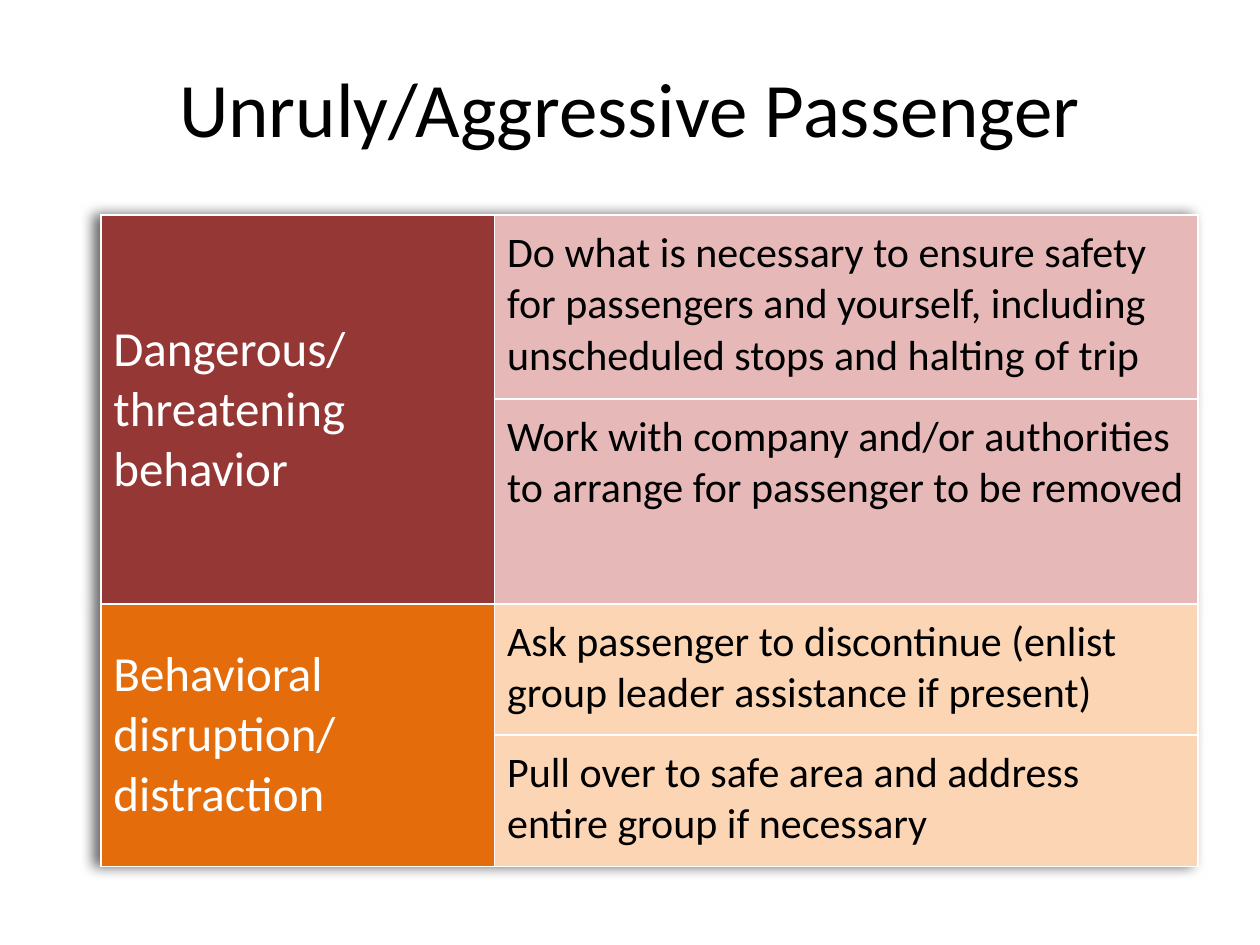
from dataclasses import dataclass

from lxml.etree import SubElement
from pptx import Presentation
from pptx.dml.color import RGBColor
from pptx.enum.text import MSO_ANCHOR, PP_ALIGN
from pptx.oxml.ns import qn
from pptx.table import Table, _Cell
from pptx.util import Pt

FONT = "Calibri"
COLUMNS = (225, 402)
ROWS = (105, 117, 75, 75)
MARGIN = Pt(7.2)


@dataclass
class Group:
    """A behavior with its responses and colours."""
    behavior: list[str]
    responses: list[str]
    dark: str
    light: str


GROUPS = [
    Group(["Dangerous/", "threatening behavior"],
          ["Do what is necessary to ensure safety for passengers and yourself, "
           "including unscheduled stops and halting of trip",
           "Work with company and/or authorities to arrange for passenger to be removed"],
          "953735", "E6B9B8"),
    Group(["Behavioral disruption/", "distraction"],
          ["Ask passenger to discontinue (enlist group leader assistance if present)",
           "Pull over to safe area and address entire group if necessary"],
          "E46C0A", "FCD5B5"),
]


def rgb(value: str) -> RGBColor:
    """Turn a hex string into a colour."""
    return RGBColor.from_string(value)


def set_format(target: object, values: dict) -> None:
    """Set attributes from a dict of format values."""
    for name, value in values.items():
        setattr(target, name, value)


def write(tf: object, lines: list[str], size: float, color: str, align: PP_ALIGN) -> None:
    """Write one paragraph per line."""
    tf.text = "\n".join(lines)
    for p in tf.paragraphs:
        p.alignment = align
        for r in p.runs:
            set_format(r.font, {"name": FONT, "size": Pt(size), "bold": False})
            r.font.color.rgb = rgb(color)


def add_borders(cell: _Cell) -> None:
    """Give a cell thin white borders."""
    tc_pr = cell._tc.get_or_add_tcPr()
    for i, side in enumerate(("lnL", "lnR", "lnT", "lnB")):
        ln = tc_pr.makeelement(qn(f"a:{side}"), {"w": str(Pt(1))})
        fill = SubElement(ln, qn("a:solidFill"))
        SubElement(fill, qn("a:srgbClr"), val="FFFFFF")
        tc_pr.insert(i, ln)


def fill_cell(cell: _Cell, lines: list[str], size: float, color: str,
              fill: str, anchor: MSO_ANCHOR) -> None:
    """Fill a cell with text and colour."""
    write(cell.text_frame, lines, size, color, PP_ALIGN.LEFT)
    set_format(cell, {"vertical_anchor": anchor, "margin_left": MARGIN, "margin_right": MARGIN,
                      "margin_top": MARGIN, "margin_bottom": MARGIN})
    cell.fill.solid()
    cell.fill.fore_color.rgb = rgb(fill)


def add_shadow(table: Table) -> None:
    """Cast a soft shadow to the left of the table."""
    effects = SubElement(table._tbl.tblPr, qn("a:effectLst"))
    table._tbl.tblPr.insert(0, effects)
    shadow = SubElement(effects, qn("a:outerShdw"), blurRad=str(Pt(8)), dist=str(Pt(4)),
                        dir="10800000", algn="r", rotWithShape="0")
    black = SubElement(shadow, qn("a:srgbClr"), val="000000")
    SubElement(black, qn("a:alpha"), val="60000")


def main() -> None:
    """Build the slide."""
    prs = Presentation()
    set_format(prs, {"slide_width": Pt(720), "slide_height": Pt(540)})
    s = prs.slides.add_slide(prs.slide_layouts[5])

    title = s.shapes.title
    set_format(title, {"left": Pt(36), "top": Pt(16), "width": Pt(648), "height": Pt(90)})
    title.text_frame.vertical_anchor = MSO_ANCHOR.MIDDLE
    write(title.text_frame, ["Unruly/Aggressive Passenger"], 44, "000000", PP_ALIGN.CENTER)

    table = s.shapes.add_table(len(ROWS), len(COLUMNS), Pt(57.6), Pt(123),
                               Pt(sum(COLUMNS)), Pt(sum(ROWS))).table
    set_format(table, {"first_row": False, "horz_banding": False})
    for column, width in zip(table.columns, COLUMNS):
        column.width = Pt(width)
    for row, height in zip(table.rows, ROWS):
        row.height = Pt(height)

    top = 0
    for group in GROUPS:
        bottom = top + len(group.responses) - 1
        table.cell(top, 0).merge(table.cell(bottom, 0))
        fill_cell(table.cell(top, 0), group.behavior, 28, "FFFFFF", group.dark, MSO_ANCHOR.MIDDLE)
        for i, response in enumerate(group.responses, top):
            fill_cell(table.cell(i, 1), [response], 24, "000000", group.light, MSO_ANCHOR.TOP)
        top = bottom + 1
    for cell in table.iter_cells():
        add_borders(cell)
    add_shadow(table)
    prs.save("out.pptx")


if __name__ == "__main__":
    main()
